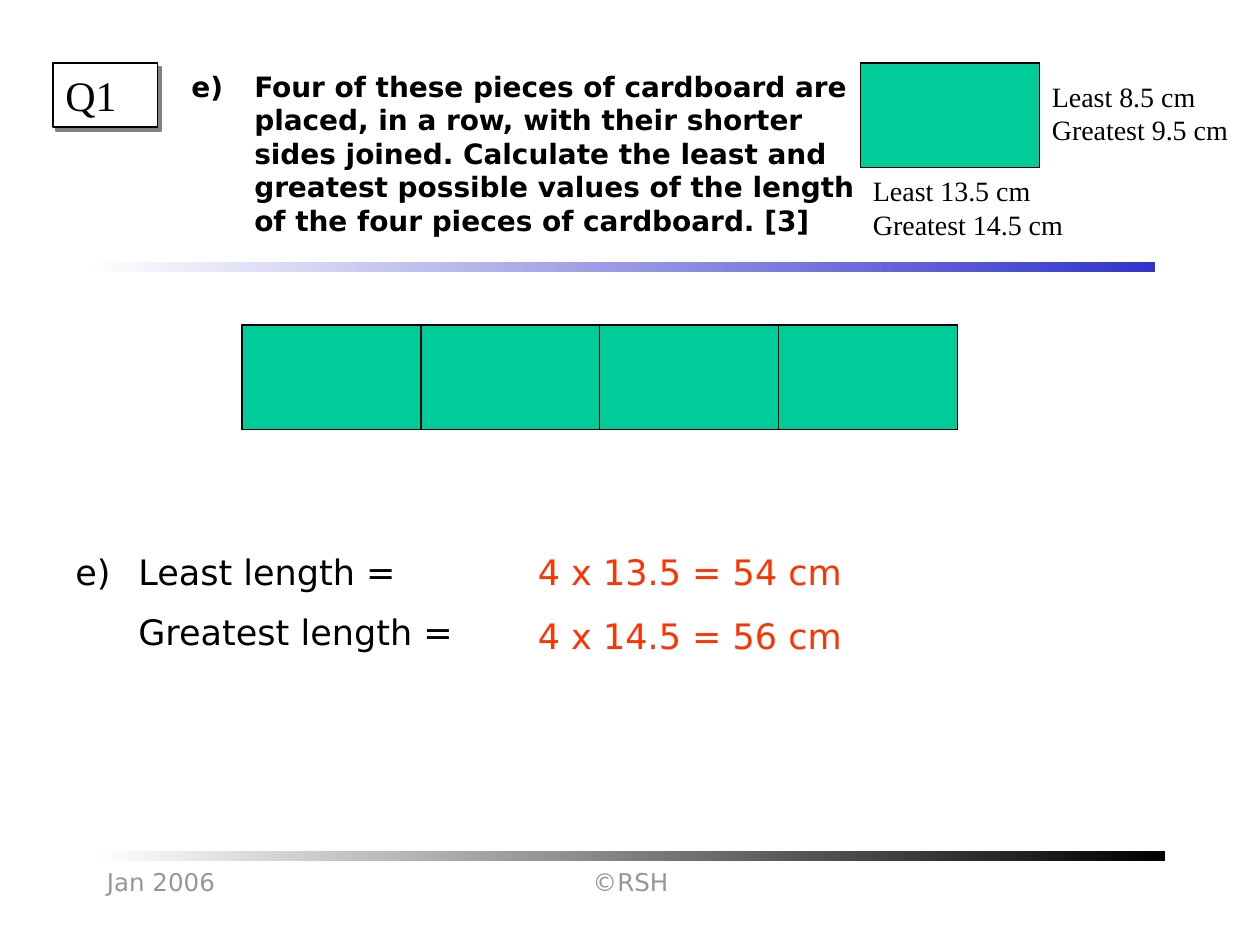
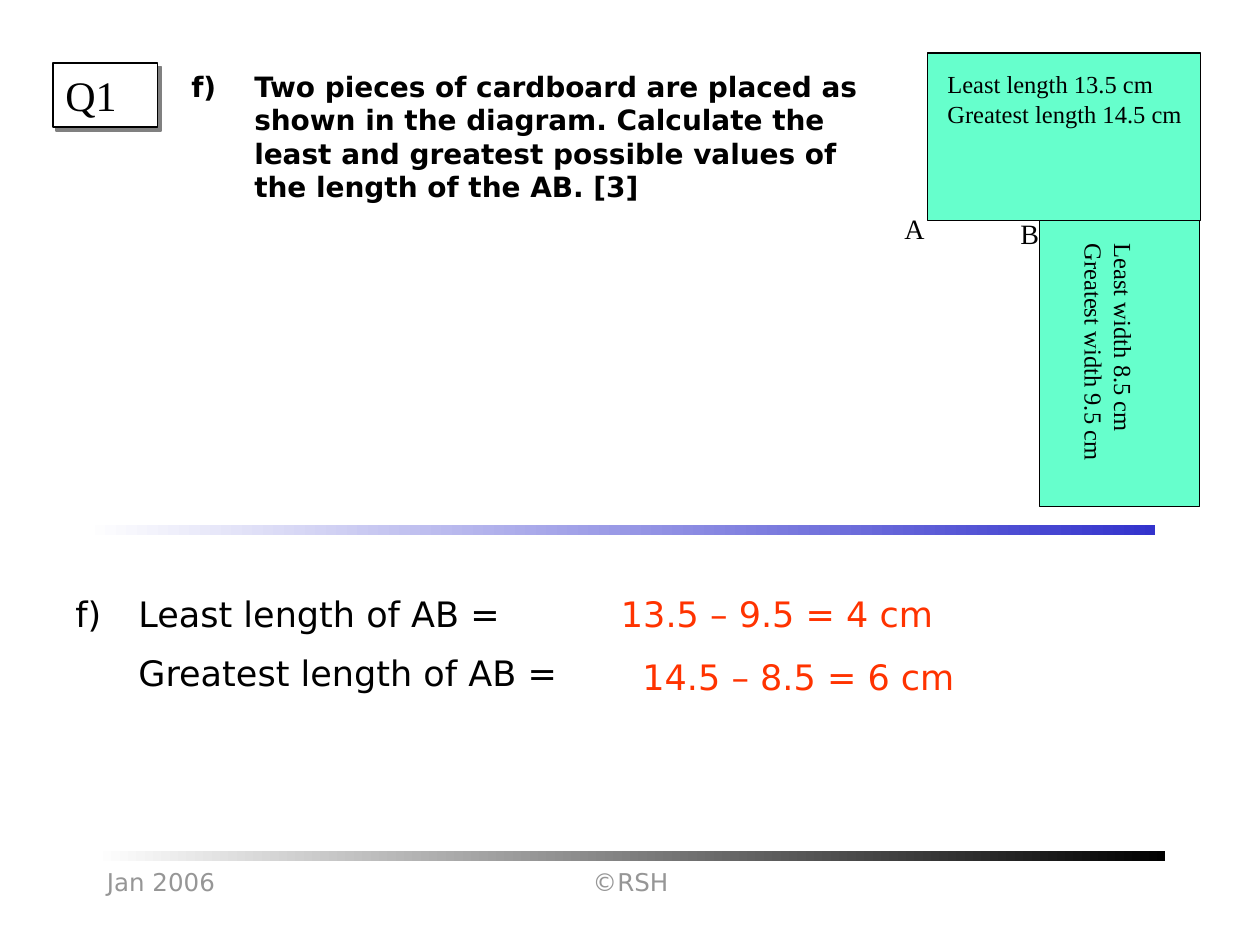
from lxml import etree
from pptx import Presentation
from pptx import util as u
from pptx.dml.color import RGBColor
from pptx.enum import shapes, text
from pptx.oxml import ns

# Shared colours and fonts
WHITE = RGBColor(0xFF, 0xFF, 0xFF)
BLACK = RGBColor(0, 0, 0)
GREY = RGBColor(0x96, 0x96, 0x96)
BLUE = RGBColor(0x33, 0x33, 0xCC)
ANSWER_RED = RGBColor(0xFF, 0x33, 0x00)
CARD_GREEN = RGBColor(0x00, 0xCC, 0x99)
CARD_MINT = RGBColor(0x66, 0xFF, 0xCC)
SANS = "DejaVu Sans"
SERIF = "Times New Roman"

# Size of one piece of cardboard in the row
CARD_WIDTH, CARD_HEIGHT = 1.42, 0.83


def add_xml(parent, tag, **attributes):
    return etree.SubElement(parent, ns.qn(tag), **attributes)


def box(left, top, width, height):
    return [u.Inches(value) for value in (left, top, width, height)]


def write(shape, paragraphs, size, font=SERIF, color=BLACK, bold=False,
          align=text.PP_ALIGN.LEFT, spaced=True):
    """Fill a shape with paragraphs; a newline inside one is a line break."""
    frame = shape.text_frame
    frame.word_wrap = True
    frame.vertical_anchor = text.MSO_ANCHOR.TOP
    if spaced:
        frame.auto_size = text.MSO_AUTO_SIZE.SHAPE_TO_FIT_TEXT
    for index, content in enumerate(paragraphs):
        paragraph = frame.paragraphs[0] if index == 0 else frame.add_paragraph()
        paragraph.alignment = align
        if spaced:
            before = add_xml(paragraph._p.get_or_add_pPr(), "a:spcBef")
            add_xml(before, "a:spcPct", val="50000")
        for number, line in enumerate(content.split("\n")):
            if number:
                paragraph.add_line_break()
            run = paragraph.add_run()
            run.text = line
            run.font.size = u.Pt(size)
            run.font.name = font
            run.font.bold = bold
            run.font.color.rgb = color


def add_label(slide, place, paragraphs, size=16, rotation=0, **style):
    label = slide.shapes.add_textbox(*box(*place))
    label.rotation = rotation
    write(label, paragraphs, size, **style)
    return label


def add_rectangle(slide, place, fill, line_width=0.75, rotation=0):
    rectangle = slide.shapes.add_shape(shapes.MSO_SHAPE.RECTANGLE, *box(*place))
    rectangle.shadow.inherit = False
    rectangle.rotation = rotation
    rectangle.fill.solid()
    rectangle.fill.fore_color.rgb = fill
    rectangle.line.color.rgb = BLACK
    rectangle.line.width = u.Pt(line_width)
    return rectangle


def add_band(slide, left, top, color):
    """A thin bar that fades in from white on the left."""
    band = slide.shapes.add_shape(shapes.MSO_SHAPE.RECTANGLE,
                                  *box(left, top, 8.5, 0.08))
    band.shadow.inherit = False
    band.line.fill.background()
    band.fill.gradient()
    band.fill.gradient_angle = 0
    for stop, stop_color in zip(band.fill.gradient_stops, (WHITE, color)):
        stop.color.rgb = stop_color


def add_footer(slide):
    add_band(slide, 0.75, 6.75, BLACK)
    style = dict(size=14, font=SANS, color=GREY, spaced=False)
    add_label(slide, (0.75, 6.83, 2.08, 0.5), ["Jan 2006"], **style)
    add_label(slide, (3.42, 6.83, 3.17, 0.5), ["©RSH"],
              align=text.PP_ALIGN.CENTER, **style)


def add_question_tag(slide):
    tag = add_rectangle(slide, (0.42, 0.5, 0.83, 0.51), WHITE, line_width=1)
    effects = tag._element.spPr.find(ns.qn("a:effectLst"))
    shadow = add_xml(effects, "a:outerShdw", dist=str(u.Pt(2.8)),
                     dir="2700000", algn="ctr", rotWithShape="0")
    add_xml(shadow, "a:srgbClr", val="808080")
    write(tag, ["Q1"], 24)


def add_question(slide, height, part, wording):
    """The bold question, lettered by its part number."""
    question = add_label(slide, (1.42, 0.5, 5.67, height), [wording],
                         font=SANS, bold=True)
    properties = question.text_frame.paragraphs[0]._p.get_or_add_pPr()
    properties.set("marL", str(u.Inches(0.5)))
    properties.set("indent", str(u.Inches(-0.5)))
    add_xml(properties, "a:buFont", typeface=SANS)
    add_xml(properties, "a:buAutoNum", type="alphaLcParenR", startAt=str(part))


def add_answers(slide, top, width, prompts, results):
    """Prompts on the left, and results as (left, top, width, wording)."""
    add_label(slide, (0.5, top, width, 0.93), prompts, 20, font=SANS)
    for left, result_top, result_width, wording in results:
        add_label(slide, (left, result_top, result_width, 0.43), [wording], 20,
                  font=SANS, color=ANSWER_RED)


def start_slide(deck, height, part, wording):
    slide = deck.slides.add_slide(deck.slide_layouts[6])
    add_footer(slide)
    add_question_tag(slide)
    add_question(slide, height, part, wording)
    return slide


def build_row_slide(deck):
    slide = start_slide(
        deck, 1.44, 5,
        "Four of these pieces of cardboard are placed, in a row, with their "
        "shorter sides joined. Calculate the least and greatest possible "
        "values of the length of the four pieces of cardboard. [3]")
    # Single piece with its limits
    add_rectangle(slide, (6.83, 0.5, CARD_WIDTH, CARD_HEIGHT), CARD_GREEN)
    add_label(slide, (6.83, 1.33, 1.75, 0.64),
              ["Least 13.5 cm\nGreatest 14.5 cm"])
    add_label(slide, (8.25, 0.58, 1.75, 0.64),
              ["Least 8.5 cm\nGreatest 9.5 cm"])
    # Four joined pieces
    for position in range(4):
        left = 1.92 + position * CARD_WIDTH
        add_rectangle(slide, (left, 2.58, CARD_WIDTH, CARD_HEIGHT), CARD_GREEN)
    add_answers(slide, 4.32, 3.83,
                ["e)\tLeast length =", "\tGreatest length ="],
                [(4.17, 4.32, 3.25, "4 x 13.5 = 54 cm"),
                 (4.17, 4.83, 3.17, "4 x 14.5 = 56 cm")])
    add_band(slide, 0.67, 2.08, BLUE)


def build_overlap_slide(deck):
    slide = start_slide(
        deck, 1.17, 6,
        "Two pieces of cardboard are placed as shown in the diagram. "
        "Calculate the least and greatest possible values of the length of "
        "the AB. [3]")
    # Level piece and upright piece
    add_rectangle(slide, (7.36, 0.42, 2.17, 1.33), CARD_MINT)
    add_rectangle(slide, (7.75, 2.25, 2.27, 1.27), CARD_MINT, rotation=270)
    add_label(slide, (7.42, 0.5, 2.08, 0.57),
              ["Least length 13.5 cm\nGreatest length 14.5 cm"], 14)
    add_label(slide, (7.8, 2.55, 2, 0.57),
              ["Least width 8.5 cm\nGreatest width 9.5 cm"], 14, rotation=90)
    # Ends of the length AB
    add_label(slide, (7.08, 1.63, 0.33, 0.37), ["A"])
    add_label(slide, (8, 1.67, 0.33, 0.37), ["B"])
    add_answers(slide, 4.65, 4.58,
                ["f)\tLeast length of AB =", "\tGreatest length of AB ="],
                [(4.83, 4.65, 3.42, "13.5 – 9.5 = 4 cm"),
                 (5, 5.15, 3.08, "14.5 – 8.5 = 6 cm")])
    add_band(slide, 0.67, 4.17, BLUE)


def main():
    deck = Presentation()
    deck.slide_width, deck.slide_height = u.Inches(10), u.Inches(7.5)
    build_row_slide(deck)
    build_overlap_slide(deck)
    deck.save("out.pptx")


if __name__ == "__main__":
    main()
